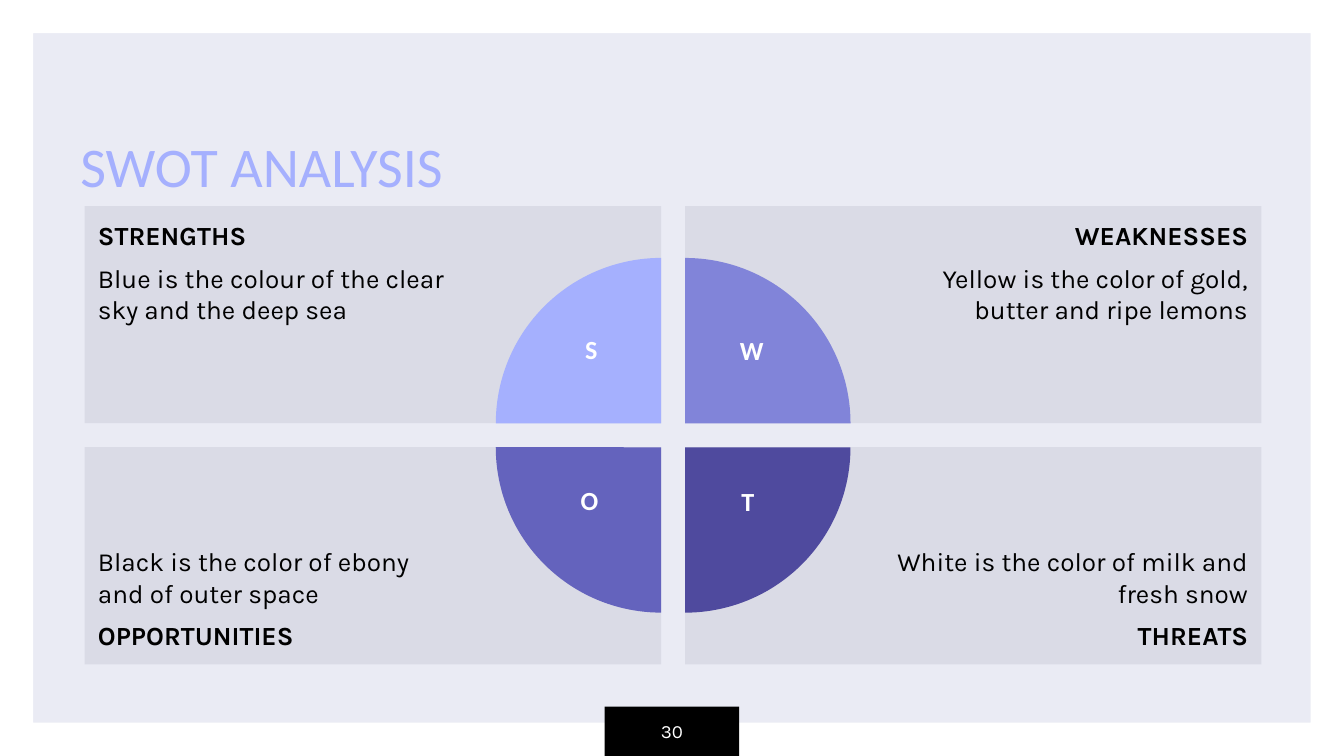
from dataclasses import dataclass

from pptx import Presentation
from pptx.dml.color import RGBColor
from pptx.enum.shapes import MSO_SHAPE
from pptx.enum.text import MSO_ANCHOR, PP_ALIGN
from pptx.util import Pt

RECTANGLE, FRAME, PIE = MSO_SHAPE.RECTANGLE, MSO_SHAPE.FRAME, MSO_SHAPE.PIE
TOP, MIDDLE, BOTTOM = MSO_ANCHOR.TOP, MSO_ANCHOR.MIDDLE, MSO_ANCHOR.BOTTOM
LEFT, CENTER, RIGHT = PP_ALIGN.LEFT, PP_ALIGN.CENTER, PP_ALIGN.RIGHT

WIDTH, HEIGHT = 720, 405
CARD_LEFT, CARD_TOP = 45.4, 110.4
CARD_WIDTH, CARD_HEIGHT = 308.8, 116.4
GAP = 12.8
RADIUS = 88.6
INSET, PIE_INSET = 7.2, 108


@dataclass(frozen=True)
class Theme:
    background: str = "EAEBF4"
    white: str = "FFFFFF"
    black: str = "000000"
    card: str = "DADBE6"
    accent: str = "A5B0FE"
    heading_font: str = "Calibri"
    body_font: str = "Karla"
    title_size: int = 30
    body_size: int = 14
    number_size: int = 10


@dataclass(frozen=True)
class Quadrant:
    row: int
    column: int
    heading: str
    body: str
    color: str
    rotation: int
    letter_box: tuple


THEME = Theme()
QUADRANTS = (
    Quadrant(0, 0, "STRENGTHS", "Blue is the colour of the clear sky and the deep sea",
             THEME.accent, 0, (306.8, 175, 20, 33)),
    Quadrant(0, 1, "WEAKNESSES", "Yellow is the color of gold, butter and ripe lemons",
             "8184D9", 90, (380.8, 175.6, 44, 33)),
    Quadrant(1, 0, "OPPORTUNITIES", "Black is the color of ebony and of outer space",
             "6463BD", 270, (303.8, 256, 24, 33)),
    Quadrant(1, 1, "THREATS", "White is the color of milk and fresh snow",
             "4F4A9E", 180, (389.6, 256.4, 22, 33)),
)


def add_filled_shape(slide, kind, box, color):
    shape = slide.shapes.add_shape(kind, *map(Pt, box))
    shape.shadow.inherit = False
    shape.fill.solid()
    shape.fill.fore_color.rgb = RGBColor.from_string(color)
    shape.line.fill.background()
    return shape


def set_frame(shape, anchor, left=INSET, right=INSET, vertical=INSET):
    frame = shape.text_frame
    frame.word_wrap = True
    frame.vertical_anchor = anchor
    frame.margin_left, frame.margin_right = Pt(left), Pt(right)
    frame.margin_top = frame.margin_bottom = Pt(vertical)
    return frame


def write(paragraph, text, font, size, color, align=LEFT, bold=False):
    paragraph.text = text
    paragraph.alignment = align
    paragraph.font.name = font
    paragraph.font.size = Pt(size)
    paragraph.font.bold = bold
    paragraph.font.color.rgb = RGBColor.from_string(color)


def add_title(slide, text):
    box = slide.shapes.add_textbox(Pt(36), Pt(46), Pt(404.6), Pt(67.8))
    frame = set_frame(box, BOTTOM)
    write(frame.paragraphs[0], text, THEME.heading_font, THEME.title_size, THEME.accent)


def add_page_number(slide, number):
    tab = add_filled_shape(slide, RECTANGLE, (324, 378.6, 72, 26.4), THEME.black)
    frame = set_frame(tab, MIDDLE)
    write(frame.paragraphs[0], number, THEME.body_font, THEME.number_size, THEME.white, CENTER)


def add_card(slide, quadrant):
    left = CARD_LEFT + quadrant.column * (CARD_WIDTH + GAP)
    top = CARD_TOP + quadrant.row * (CARD_HEIGHT + GAP)
    card = add_filled_shape(slide, RECTANGLE, (left, top, CARD_WIDTH, CARD_HEIGHT), THEME.card)
    on_right, on_bottom = quadrant.column == 1, quadrant.row == 1
    frame = set_frame(card, BOTTOM if on_bottom else TOP,
                      left=PIE_INSET if on_right else INSET,
                      right=INSET if on_right else PIE_INSET)
    lines = [(quadrant.heading, True), (quadrant.body, False)]
    if on_bottom:
        lines.reverse()
    first, second = frame.paragraphs[0], frame.add_paragraph()
    for paragraph, (text, bold) in zip((first, second), lines):
        write(paragraph, text, THEME.body_font, THEME.body_size, THEME.black,
              RIGHT if on_right else LEFT, bold)
    second.space_before = second.space_after = Pt(6)


def add_pie(slide, quadrant):
    center_x = CARD_LEFT + CARD_WIDTH + quadrant.column * GAP
    center_y = CARD_TOP + CARD_HEIGHT + quadrant.row * GAP
    box = (center_x - RADIUS, center_y - RADIUS, 2 * RADIUS, 2 * RADIUS)
    pie = add_filled_shape(slide, PIE, box, quadrant.color)
    pie.adjustments[0], pie.adjustments[1] = 108, 162
    pie.rotation = quadrant.rotation


def add_letter(slide, quadrant):
    box = slide.shapes.add_textbox(*map(Pt, quadrant.letter_box))
    frame = set_frame(box, TOP, left=0, right=0, vertical=3.6)
    write(frame.paragraphs[0], quadrant.heading[0], THEME.heading_font, THEME.body_size,
          THEME.white, CENTER, bold=True)


def main():
    presentation = Presentation()
    presentation.slide_width, presentation.slide_height = Pt(WIDTH), Pt(HEIGHT)
    slide = presentation.slides.add_slide(presentation.slide_layouts[6])
    slide.background.fill.solid()
    slide.background.fill.fore_color.rgb = RGBColor.from_string(THEME.background)

    border = add_filled_shape(slide, FRAME, (0, 0, WIDTH, HEIGHT), THEME.white)
    border.adjustments[0] = 0.044
    add_page_number(slide, "30")
    add_title(slide, "SWOT ANALYSIS")
    for add_part in (add_card, add_pie, add_letter):
        for quadrant in QUADRANTS:
            add_part(slide, quadrant)
    presentation.save("out.pptx")


if __name__ == "__main__":
    main()
